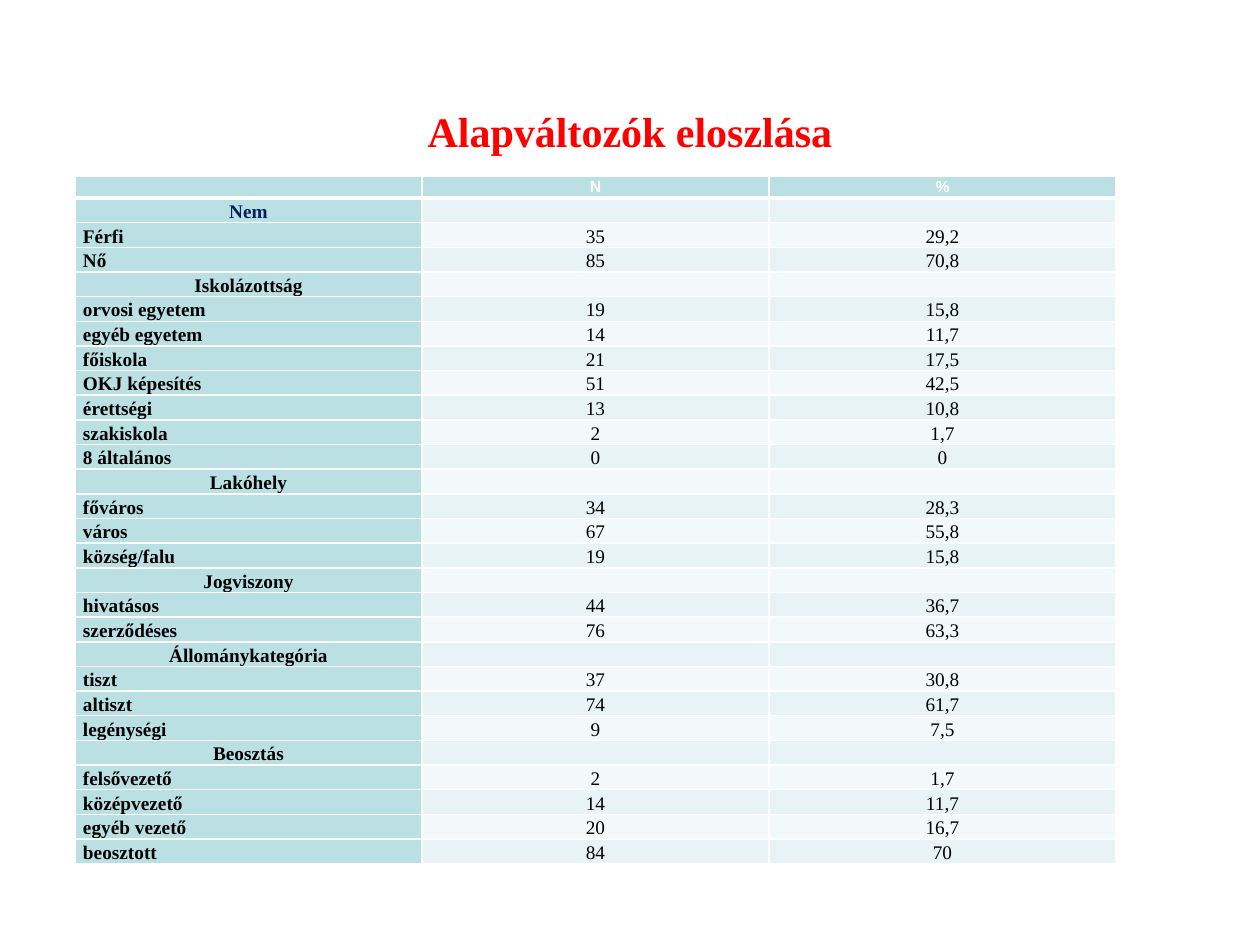
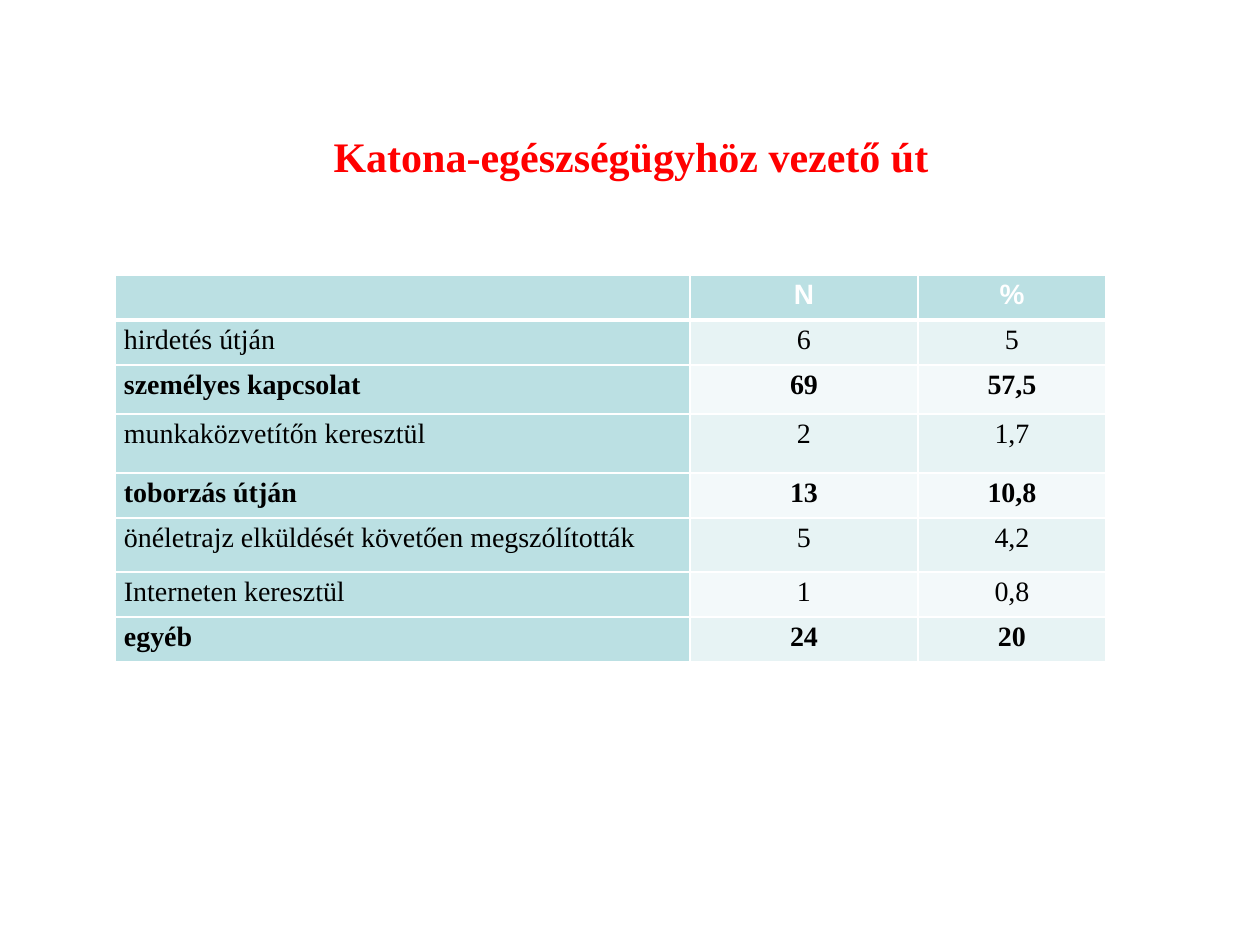
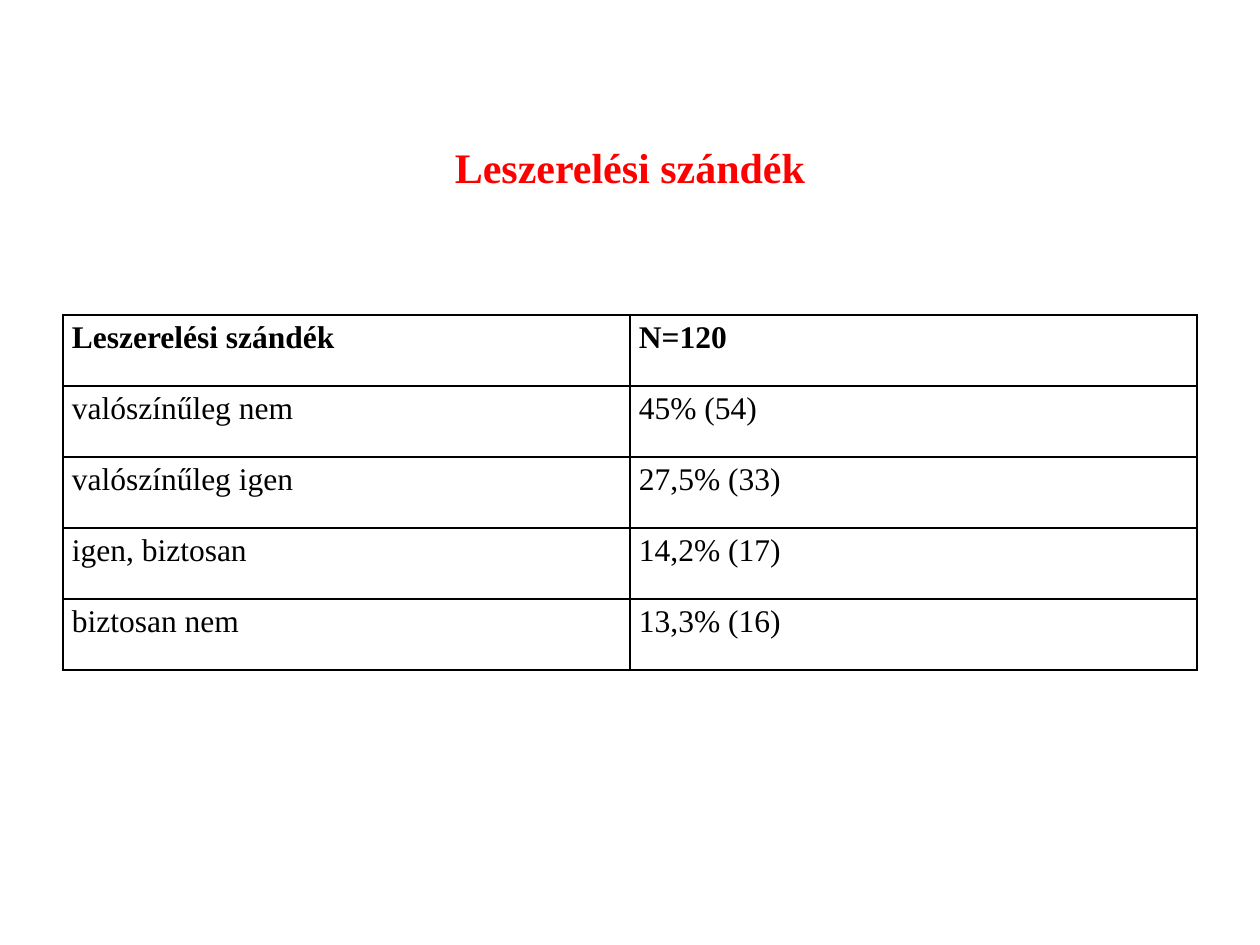
from lxml.etree import SubElement
from pptx import Presentation
from pptx.dml.color import RGBColor
from pptx.enum.text import MSO_ANCHOR, PP_ALIGN as ALIGN
from pptx.oxml.ns import qn
from pptx.util import Emu, Pt

COLORS = {
    "title": "FF0000", "text": "000000", "section": "002060", "white": "FFFFFF",
    "header": "BBE0E3", "odd": "E7F3F4", "even": "F3F9FA",
}
SERIF, SANS = "Times New Roman", "Arial"


def px(length):
    return Emu(round(length * 914400 / 126))


def add_borders(cell, color, widths):
    properties = cell._tc.get_or_add_tcPr()
    for side, width in zip("LRTB", widths):
        line = SubElement(properties, qn(f"a:ln{side}"), w=str(Pt(width)))
        fill = SubElement(line, qn("a:solidFill"))
        SubElement(fill, qn("a:srgbClr"), val=COLORS[color])


distribution = [
    ("", "N", "%"),
    ("Nem",), ("Férfi", "35", "29,2"), ("Nő", "85", "70,8"),
    ("Iskolázottság",), ("orvosi egyetem", "19", "15,8"), ("egyéb egyetem", "14", "11,7"),
    ("főiskola", "21", "17,5"), ("OKJ képesítés", "51", "42,5"), ("érettségi", "13", "10,8"),
    ("szakiskola", "2", "1,7"), ("8 általános", "0", "0"),
    ("Lakóhely",), ("főváros", "34", "28,3"), ("város", "67", "55,8"), ("község/falu", "19", "15,8"),
    ("Jogviszony",), ("hivatásos", "44", "36,7"), ("szerződéses", "76", "63,3"),
    ("Állománykategória",), ("tiszt", "37", "30,8"), ("altiszt", "74", "61,7"),
    ("legénységi", "9", "7,5"),
    ("Beosztás",), ("felsővezető", "2", "1,7"), ("középvezető", "14", "11,7"),
    ("egyéb vezető", "20", "16,7"), ("beosztott", "84", "70"),
]
recruitment = [
    ("", "N", "%"),
    ("hirdetés útján", "6", "5"),
    ("személyes kapcsolat", "69", "57,5"),
    ("munkaközvetítőn keresztül", "2", "1,7"),
    ("toborzás útján", "13", "10,8"),
    ("önéletrajz elküldését követően megszólították", "5", "4,2"),
    ("Interneten keresztül", "1", "0,8"),
    ("egyéb", "24", "20"),
]
discharge = [
    ("Leszerelési szándék", "N=120"),
    ("valószínűleg nem", "45% (54)"),
    ("valószínűleg igen", "27,5% (33)"),
    ("igen, biztosan", "14,2% (17)"),
    ("biztosan nem", "13,3% (16)"),
]
highlighted = {"személyes kapcsolat", "toborzás útján", "egyéb"}

pages = [
    dict(title="Alapváltozók eloszlása", title_box=(63, 66, 1134, 130), title_inset=6,
         rows=distribution, corner=(75, 176), columns=[347] * 3, heights=[22] * 28,
         sizes=(9, 11), inset=8, banded=True, bold_labels=True),
    dict(title="Katona-egészségügyhöz vezető út", title_box=(64, 66, 1134, 130), title_inset=56,
         rows=recruitment, corner=(115, 275), columns=[575, 228, 188],
         heights=[45, 45, 49, 59, 45, 54, 45, 45],
         sizes=(16, 16), inset=9, banded=True, bold_labels=False),
    dict(title="Leszerelési szándék", title_box=(63, 98, 1134, 129), title_inset=14,
         rows=discharge, corner=(63, 315), columns=[567] * 2, heights=[71] * 5,
         sizes=(18, 18), inset=9, banded=False, bold_labels=False),
]

presentation = Presentation()
presentation.slide_width, presentation.slide_height = px(1260), px(945)

for page in pages:
    slide = presentation.slides.add_slide(presentation.slide_layouts[5])
    title = slide.shapes.title
    title.left, title.top, title.width, title.height = map(px, page["title_box"])
    title.text_frame.vertical_anchor = MSO_ANCHOR.MIDDLE
    title.text_frame.margin_top = px(page["title_inset"])
    paragraph = title.text_frame.paragraphs[0]
    paragraph.alignment = ALIGN.CENTER
    run = paragraph.add_run()
    run.text = page["title"]
    run.font.name, run.font.size, run.font.bold = SERIF, Pt(24), True
    run.font.color.rgb = RGBColor.from_string(COLORS["title"])

    rows, columns, heights = page["rows"], page["columns"], page["heights"]
    banded = page["banded"]
    table = slide.shapes.add_table(
        len(rows), len(columns), *map(px, (*page["corner"], sum(columns), sum(heights)))).table
    for column, width in zip(table.columns, columns):
        column.width = px(width)
    for row, height in zip(table.rows, heights):
        row.height = px(height)

    for row_index, values in enumerate(rows):
        is_header = row_index == 0
        is_section = len(values) == 1
        size = page["sizes"][0 if is_header else 1]
        for column_index in range(len(columns)):
            cell = table.cell(row_index, column_index)
            is_label = column_index == 0
            cell.margin_left = cell.margin_right = px(page["inset"])
            cell.margin_top = cell.margin_bottom = 0
            if banded:
                top = 3 if row_index == 1 else 1
                bottom = 3 if is_header else 1
                add_borders(cell, "white", (1, 1, top, bottom))
                band = "odd" if row_index % 2 else "even"
                cell.fill.solid()
                cell.fill.fore_color.rgb = RGBColor.from_string(
                    COLORS["header" if is_header or is_label else band])
            else:
                add_borders(cell, "text", (1, 1, 1, 1))
                cell.fill.background()

            paragraph = cell.text_frame.paragraphs[0]
            text = values[column_index] if column_index < len(values) else ""
            if not text:
                SubElement(paragraph._p, qn("a:endParaRPr"), sz=str(size * 100))
                continue
            paragraph.line_spacing = 1.15
            if not banded:
                paragraph.alignment = ALIGN.LEFT
            elif is_label and not is_section:
                paragraph.alignment = ALIGN.JUSTIFY
            else:
                paragraph.alignment = ALIGN.CENTER
            run = paragraph.add_run()
            run.text = text
            run.font.size = Pt(size)
            run.font.name = SANS if banded and is_header else SERIF
            run.font.bold = (is_header or values[0] in highlighted
                             or (is_label and page["bold_labels"]))
            if banded and is_header:
                color = "white"
            else:
                color = "section" if text == "Nem" else "text"
            run.font.color.rgb = RGBColor.from_string(COLORS[color])

presentation.save("out.pptx")
